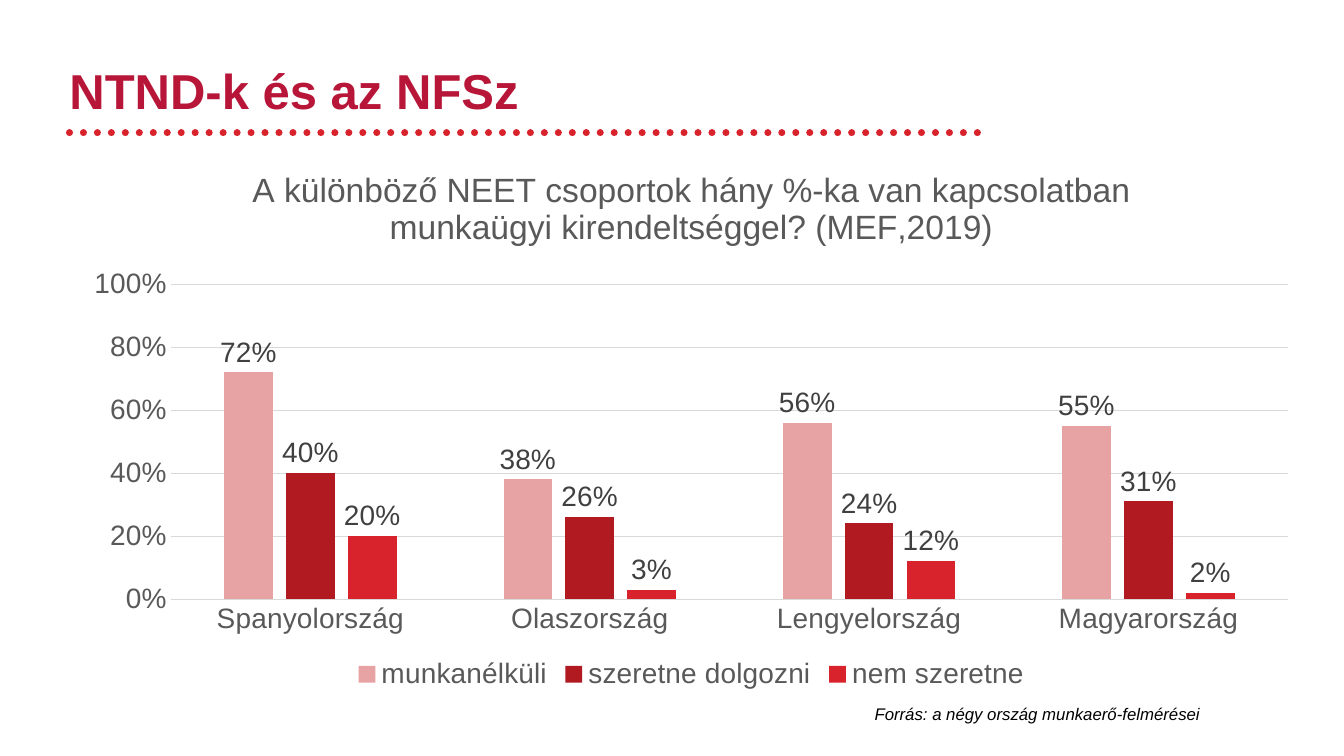
from pptx import Presentation
from pptx.chart.data import CategoryChartData
from pptx.dml.color import RGBColor
from pptx.enum.chart import XL_CHART_TYPE, XL_LABEL_POSITION, XL_LEGEND_POSITION, XL_TICK_MARK
from pptx.enum.dml import MSO_LINE
from pptx.enum.shapes import MSO_CONNECTOR
from pptx.enum.text import MSO_ANCHOR, MSO_AUTO_SIZE, PP_ALIGN
from pptx.oxml.ns import qn
from pptx.util import Cm, Pt
from lxml.etree import SubElement

HEAD = "NTND-k és az NFSz"
NOTE = "Forrás: a négy ország munkaerő-felmérései"
ASK = "A különböző NEET csoportok hány %-ka van kapcsolatban munkaügyi kirendeltséggel? (MEF,2019)"
LANDS = ["Spanyolország", "Olaszország", "Lengyelország", "Magyarország"]
GROUPS = [
    ("munkanélküli", "E7A3A4", (0.72, 0.38, 0.56, 0.55)),
    ("szeretne dolgozni", "B21A22", (0.40, 0.26, 0.24, 0.31)),
    ("nem szeretne", "D8222C", (0.20, 0.03, 0.12, 0.02)),
]

THEME = {
    "face": "Arial",
    "head": {"size": 35, "color": "B81639", "bold": True},
    "note": {"size": 12, "color": "000000", "italic": True},
    "ask": {"size": 24, "color": "595959", "bold": False},
    "axis": {"size": 20, "color": "595959"},
    "label": {"size": 20, "color": "404040"},
    "dots": "D8222C",
    "grid": "D9D9D9",
}
FORMAT = "0%"
LEFT = 1.75


def apply(item, **values):
    for name, value in values.items():
        setattr(item, name, value)


def style(font, key):
    look = dict(THEME[key])
    font.color.rgb = RGBColor.from_string(look.pop("color"))
    apply(font, name=THEME["face"], **{**look, "size": Pt(look["size"])})


def stroke(line, color, width):
    line.color.rgb = RGBColor.from_string(color)
    line.width = Pt(width)


def place(shape, *box):
    apply(shape, **dict(zip(("left", "top", "width", "height"), map(Cm, box))))


def add_head(slide):
    head = slide.shapes.title
    place(head, LEFT, 1.52, 26.82, 1.5)
    frame = head.text_frame
    frame.text = HEAD
    apply(frame, margin_left=0, margin_top=0, margin_right=0, margin_bottom=0,
          vertical_anchor=MSO_ANCHOR.MIDDLE, word_wrap=True,
          auto_size=MSO_AUTO_SIZE.NONE)
    par = frame.paragraphs[0]
    par.alignment = PP_ALIGN.LEFT
    style(par.runs[0].font, "head")


def add_dots(slide):
    rule = slide.shapes.add_connector(
        MSO_CONNECTOR.STRAIGHT, Cm(LEFT), Cm(3.35), Cm(24.92), Cm(3.35))
    stroke(rule.line, THEME["dots"], 5)
    rule.line.dash_style = MSO_LINE.ROUND_DOT
    props = rule._element.spPr
    props.find(qn("a:ln")).set("cap", "rnd")
    SubElement(props, qn("a:effectLst"))


def add_note(slide):
    note = slide.shapes.add_textbox(Cm(21.79), Cm(17.6), Cm(11.51), Cm(0.77))
    frame = note.text_frame
    frame.word_wrap = True
    frame.text = NOTE
    style(frame.paragraphs[0].runs[0].font, "note")


def add_bars(slide):
    data = CategoryChartData(number_format=FORMAT)
    data.categories = LANDS
    for name, _, values in GROUPS:
        data.add_series(name, values)
    chart = slide.shapes.add_chart(
        XL_CHART_TYPE.COLUMN_CLUSTERED, Cm(LEFT), Cm(3.66), Cm(31.34), Cm(13.87), data).chart
    style(chart.font, "axis")

    chart.has_title = True
    title = chart.chart_title
    title.include_in_layout = False
    title.text_frame.text = ASK
    style(title.text_frame.paragraphs[0].runs[0].font, "ask")

    chart.has_legend = True
    apply(chart.legend, position=XL_LEGEND_POSITION.BOTTOM, include_in_layout=False)
    style(chart.legend.font, "axis")

    for axis in (chart.category_axis, chart.value_axis):
        apply(axis, major_tick_mark=XL_TICK_MARK.NONE, minor_tick_mark=XL_TICK_MARK.NONE)
        style(axis.tick_labels.font, "axis")
    stroke(chart.category_axis.format.line, THEME["grid"], 0.75)
    scale = chart.value_axis
    apply(scale, minimum_scale=0, maximum_scale=1, major_unit=0.2, has_major_gridlines=True)
    apply(scale.tick_labels, number_format=FORMAT, number_format_is_linked=False)
    scale.format.line.fill.background()
    stroke(scale.major_gridlines.format.line, THEME["grid"], 0.75)

    plot = chart.plots[0]
    apply(plot, gap_width=219, overlap=-27, vary_by_categories=False)
    for bars, (_, color, _) in zip(plot.series, GROUPS):
        bars.format.fill.solid()
        bars.format.fill.fore_color.rgb = RGBColor.from_string(color)
        bars.invert_if_negative = False
        labels = bars.data_labels
        apply(labels, show_value=True, number_format=FORMAT,
              number_format_is_linked=False, position=XL_LABEL_POSITION.OUTSIDE_END)
        style(labels.font, "label")


def main():
    deck = Presentation()
    apply(deck, slide_width=Cm(33.87), slide_height=Cm(19.05))
    slide = deck.slides.add_slide(deck.slide_layouts[5])
    for add in (add_dots, add_head, add_note, add_bars):
        add(slide)
    deck.save("out.pptx")


if __name__ == "__main__":
    main()
